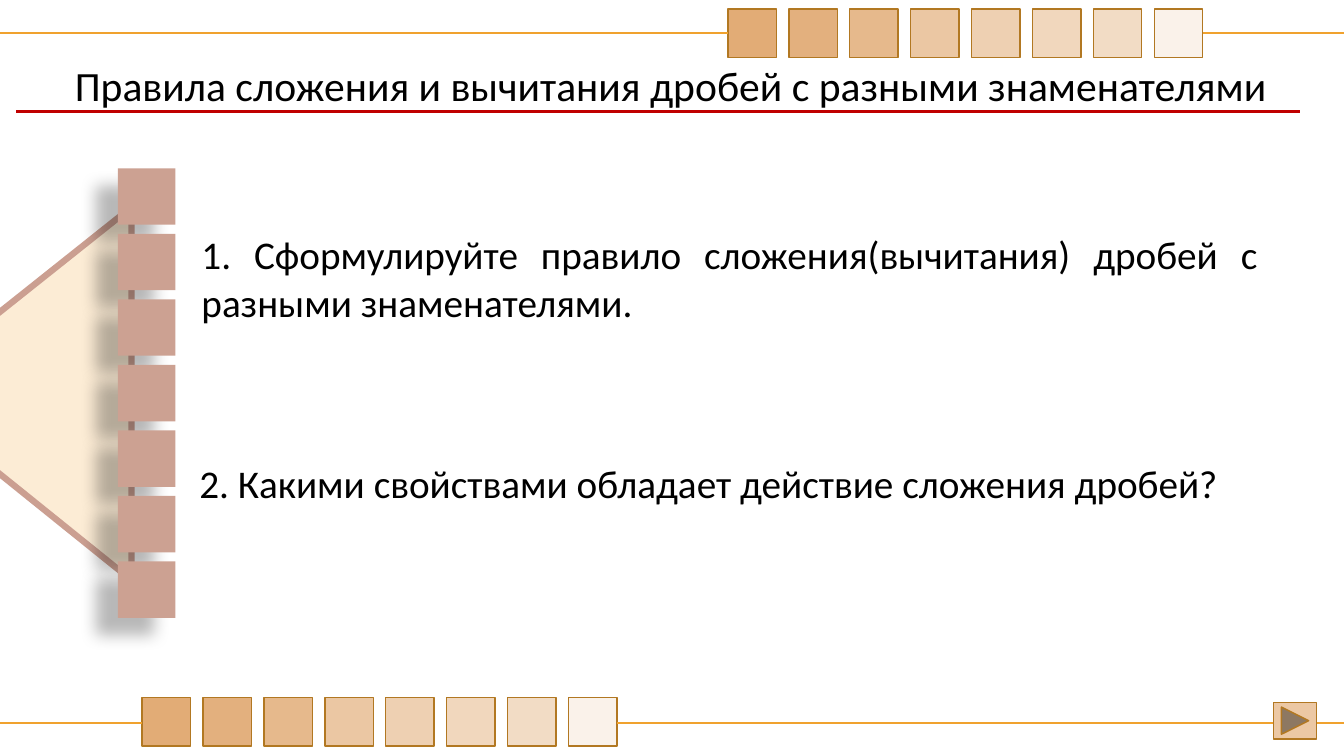
from dataclasses import dataclass

from lxml import etree
from pptx import Presentation
from pptx.dml.color import RGBColor
from pptx.enum.shapes import MSO_CONNECTOR, MSO_SHAPE
from pptx.enum.text import MSO_ANCHOR, MSO_AUTO_SIZE, PP_ALIGN
from pptx.oxml.ns import qn
from pptx.util import Inches, Pt


@dataclass(frozen=True)
class Theme:
    font: str = "Calibri"
    title_size: float = 29.7
    body_size: float = 28
    text: str = "000000"
    tile: str = "E2AC76"
    tile_line: str = "B27822"
    band_line: str = "F0A22E"
    rule: str = "C00000"
    button: str = "ECC8A4"
    roof: str = "FCECD5"
    roof_line: str = "CB9F91"
    block: str = "CCA192"
    shadow: str = "000000"


THEME = Theme()
SLIDE_WIDTH = 13.33
TILE_OPACITIES = (100, 94, 84, 67, 56, 48, 42, 15)
TILE_SIZE = 0.48
TILE_STEP = 0.604
BLOCK_COUNT = 7


def add_figure(slide, kind, box, fill, line=None, line_width=1):
    shape = slide.shapes.add_shape(kind, *map(Inches, box))
    shape.shadow.inherit = False
    shape.fill.solid()
    shape.fill.fore_color.rgb = RGBColor.from_string(fill)
    if line:
        shape.line.color.rgb = RGBColor.from_string(line)
        shape.line.width = Pt(line_width)
    else:
        shape.line.fill.background()
    return shape


def add_line(slide, start, end, color, width):
    connector = slide.shapes.add_connector(
        MSO_CONNECTOR.STRAIGHT, *map(Inches, (*start, *end)))
    connector.line.color.rgb = RGBColor.from_string(color)
    connector.line.width = Pt(width)
    etree.SubElement(connector._element.spPr, qn("a:effectLst"))


def set_opacity(color, percent):
    alpha = etree.SubElement(color, qn("a:alpha"))
    alpha.set("val", str(percent * 1000))


def add_block_shadow(shape):
    effects = shape._element.spPr.find(qn("a:effectLst"))
    shadow = etree.SubElement(
        effects, qn("a:outerShdw"), blurRad=str(Pt(11.8)), dist=str(Pt(19.7)),
        dir=str(141 * 60000), algn="ctr", rotWithShape="0")
    color = etree.SubElement(shadow, qn("a:srgbClr"), val=THEME.shadow)
    set_opacity(color, 28)


def write_text(shape, text, size, alignment):
    frame = shape.text_frame
    frame.text = text
    frame.word_wrap = True
    frame.vertical_anchor = MSO_ANCHOR.TOP
    paragraph = frame.paragraphs[0]
    paragraph.alignment = alignment
    font = paragraph.runs[0].font
    font.name = THEME.font
    font.size = Pt(size)
    font.color.rgb = RGBColor.from_string(THEME.text)
    return paragraph


def add_tile_band(slide, left, top, line_y):
    right = left + TILE_STEP * (len(TILE_OPACITIES) - 1) + TILE_SIZE
    for index, opacity in enumerate(TILE_OPACITIES):
        box = (left + index * TILE_STEP, top, TILE_SIZE, TILE_SIZE)
        tile = add_figure(slide, MSO_SHAPE.RECTANGLE, box, THEME.tile, THEME.tile_line)
        if opacity < 100:
            color = tile._element.spPr.find(qn("a:solidFill")).find(qn("a:srgbClr"))
            set_opacity(color, opacity)
    for start, end in ((left, 0), (SLIDE_WIDTH, right)):
        add_line(slide, (start, line_y), (end, line_y), THEME.band_line, 1.5)


def add_heading(slide, text, box):
    left, top, width, height = box
    title = slide.shapes.title
    title.left, title.top, title.width, title.height = map(Inches, box)
    paragraph = write_text(title, text, THEME.title_size, PP_ALIGN.CENTER)
    title.text_frame.auto_size = MSO_AUTO_SIZE.NONE
    paragraph.line_spacing = 0.7
    rule_y = top + 0.43
    add_line(slide, (left + 0.05, rule_y), (left + width - 0.32, rule_y),
             THEME.rule, 2.25)


def add_tower(slide, left, top):
    roof = add_figure(slide, MSO_SHAPE.ISOSCELES_TRIANGLE,
                      (left - 2.87, top + 1.08, 3.7, 2.31),
                      THEME.roof, THEME.roof_line, 4.5)
    roof.rotation = 270
    roof.adjustments[0] = 0.503
    for index in range(BLOCK_COUNT):
        block = add_figure(slide, MSO_SHAPE.RECTANGLE,
                           (left, top + index * 0.65, 0.57, 0.56), THEME.block)
        add_block_shadow(block)


def add_question(slide, text, box):
    question = slide.shapes.add_textbox(*map(Inches, box))
    write_text(question, text, THEME.body_size, PP_ALIGN.JUSTIFY)
    question.text_frame.auto_size = MSO_AUTO_SIZE.SHAPE_TO_FIT_TEXT


def build_slide(presentation):
    slide = presentation.slides.add_slide(presentation.slide_layouts[5])
    add_tile_band(slide, 7.22, 0.09, 0.33)
    add_tile_band(slide, 1.41, 6.92, 7.17)
    add_heading(slide, "Правила сложения и вычитания дробей с разными знаменателями",
                (0.11, 0.68, 13.1, 0.69))
    add_figure(slide, MSO_SHAPE.ACTION_BUTTON_FORWARD_OR_NEXT,
               (12.63, 6.97, 0.43, 0.36), THEME.button, THEME.tile_line)
    add_question(slide, "1. Сформулируйте правило сложения(вычитания) дробей с "
                 "разными знаменателями.", (1.9, 2.24, 10.67, 1.04))
    add_tower(slide, 1.17, 1.67)
    add_question(slide, "2. Какими свойствами обладает действие сложения дробей?",
                 (1.88, 4.51, 10.67, 0.57))


def main():
    presentation = Presentation()
    presentation.slide_width = Inches(SLIDE_WIDTH)
    presentation.slide_height = Inches(7.5)
    build_slide(presentation)
    presentation.save("out.pptx")


if __name__ == "__main__":
    main()
